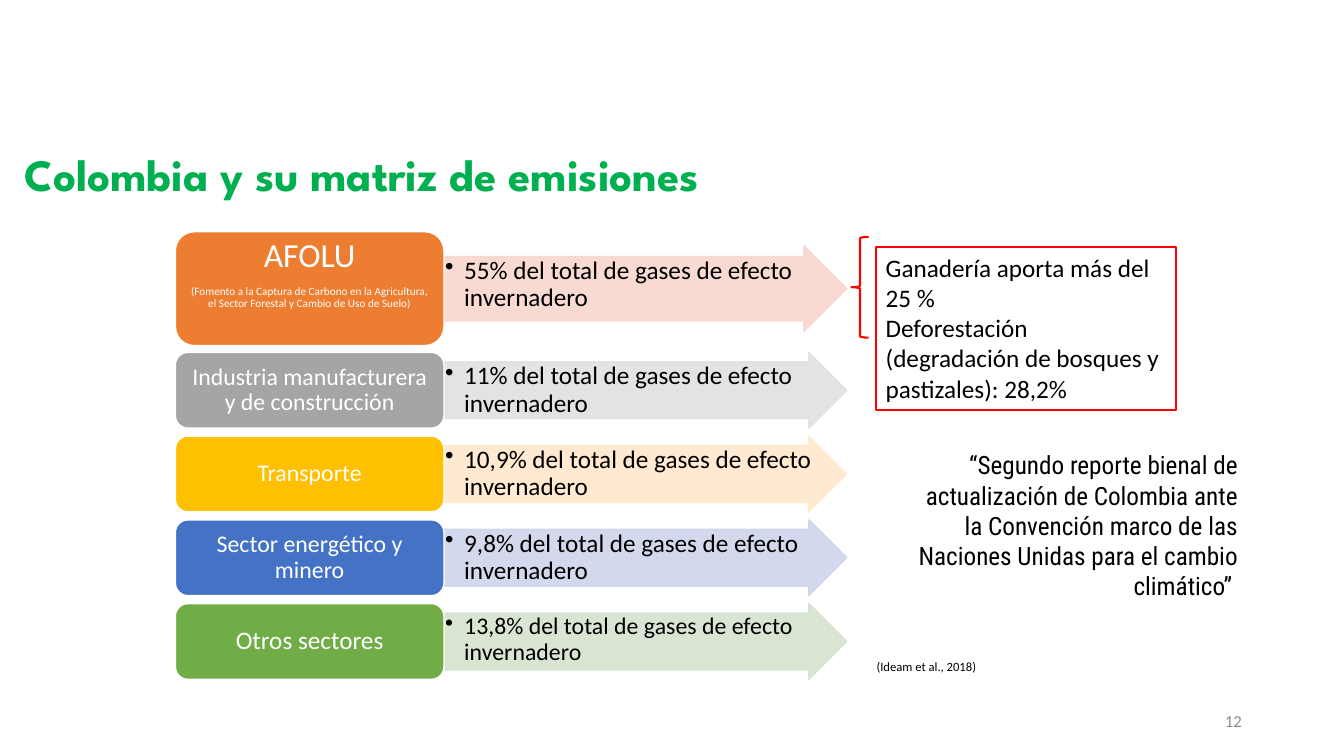
from pptx import Presentation
from pptx.dml.color import RGBColor
from pptx.enum.shapes import MSO_SHAPE
from pptx.enum.text import MSO_ANCHOR, MSO_AUTO_SIZE, PP_ALIGN
from pptx.oxml.ns import qn
from pptx.util import Cm, Pt
from lxml.etree import SubElement

BLACK = RGBColor(0x00, 0x00, 0x00)
WHITE = RGBColor(0xFF, 0xFF, 0xFF)
GRAY = RGBColor(0x8C, 0x8C, 0x8C)
GREEN = RGBColor(0x00, 0xB0, 0x50)
RED = RGBColor(0xFF, 0x00, 0x00)
ORANGE = RGBColor(0xED, 0x7D, 0x31)
SILVER = RGBColor(0xA5, 0xA5, 0xA5)
GOLD = RGBColor(0xFF, 0xC0, 0x00)
BLUE = RGBColor(0x44, 0x72, 0xC4)
LEAF = RGBColor(0x70, 0xAD, 0x47)
PEACH = RGBColor(0xF8, 0xD7, 0xCE)
MIST = RGBColor(0xE1, 0xE1, 0xE1)
CREAM = RGBColor(0xFF, 0xE8, 0xCC)
SKY = RGBColor(0xCF, 0xD5, 0xEA)
MINT = RGBColor(0xD5, 0xE3, 0xCF)

LABEL = "{} del total de gases de efecto invernadero"
SECTORS = [
    ("Industria manufacturera y de construcción", 17, SILVER, "11%", 18, MIST),
    ("Transporte", 17, GOLD, "10,9%", 18, CREAM),
    ("Sector energético y minero", 17, BLUE, "9,8%", 18, SKY),
    ("Otros sectores", 18, LEAF, "13,8%", 17, MINT),
]


def write(frame, text, size=18, font="Calibri", color=BLACK, bold=False,
          align=PP_ALIGN.LEFT, anchor=MSO_ANCHOR.TOP, inset=(0.25, 0.13),
          space=None, after=None, bullet=False, more=False):
    """Write one paragraph into a frame; more=True appends it."""
    if more:
        para = frame.add_paragraph()
    else:
        para = frame.paragraphs[0]
        frame.word_wrap = True
        frame.auto_size = MSO_AUTO_SIZE.NONE
        frame.vertical_anchor = anchor
        frame.margin_left = frame.margin_right = Cm(inset[0])
        frame.margin_top = frame.margin_bottom = Cm(inset[1])
    para.alignment = align
    para.line_spacing = space
    if after:
        para.space_after = Pt(after)
    if bullet:
        props = para._p.get_or_add_pPr()
        props.set("marL", str(Cm(0.48)))
        props.set("indent", str(-Cm(0.48)))
        SubElement(props, qn("a:buChar")).set("char", "•")
    run = para.add_run()
    run.text = text
    run.font.size = Pt(size)
    run.font.name = font
    run.font.bold = bold
    run.font.color.rgb = color


def place(slide, kind, box, line, width, fill=None):
    """Add a flat shape in a box given in centimetres."""
    shape = slide.shapes.add_shape(kind, *map(Cm, box))
    shape.shadow.inherit = False
    if fill is None:
        shape.fill.background()
    else:
        shape.fill.solid()
        shape.fill.fore_color.rgb = fill
    shape.line.color.rgb = line
    shape.line.width = Pt(width)
    return shape


def note(slide, box, text, **style):
    """Add a text box in a box given in centimetres."""
    frame = slide.shapes.add_textbox(*map(Cm, box)).text_frame
    write(frame, text, **style)


def head(slide, box):
    """Fill and move the title."""
    title = slide.shapes.title
    title.left, title.top, title.width, title.height = map(Cm, box)
    write(title.text_frame, "Colombia y su matriz de emisiones", size=32,
          font="League Spartan", color=GREEN, bold=True)


def arrow(slide, box, share, size, tint):
    """Draw a pale arrow with its share of emissions."""
    shape = place(slide, MSO_SHAPE.RIGHT_ARROW, box, tint, 1, tint)
    shape.adjustments[0] = 0.75
    shape.adjustments[1] = 0.5
    for color in shape._element.spPr.iter(qn("a:srgbClr")):
        SubElement(color, qn("a:alpha")).set("val", "90000")
    write(shape.text_frame, LABEL.format(share), size=size,
          inset=(0.03, 0.03), space=0.9, bullet=True)


def sector(slide, box, fill):
    """Draw a rounded sector box and return its text frame."""
    return place(slide, MSO_SHAPE.ROUNDED_RECTANGLE, box, WHITE, 1,
                 fill).text_frame


def matrix(slide, box):
    """Draw the first, taller row and the four equal rows below it."""
    left, top, width, height = box
    wide, tall, high, step = 6.77, 2.87, 1.91, 2.11
    mid, span = left + wide, width - wide
    style = dict(color=WHITE, align=PP_ALIGN.CENTER, space=0.9)

    thick = 2.16
    arrow(slide, (mid, top + (tall - thick) / 2, span, thick), "55%", 18, PEACH)
    frame = sector(slide, (left, top, wide, tall), ORANGE)
    write(frame, "AFOLU", size=24, inset=(0.25, 0.03), after=8, **style)
    write(frame, "(Fomento a la Captura de Carbono en la Agricultura, "
          "el Sector Forestal y Cambio de Uso de Suelo)", size=8, more=True,
          **style)

    first = top + height - 3 * step - high
    for row, (name, size, fill, share, small, tint) in enumerate(SECTORS):
        y = first + row * step
        arrow(slide, (mid, y, span, high), share, small, tint)
        frame = sector(slide, (left, y, wide, high), fill)
        write(frame, name, size=size, anchor=MSO_ANCHOR.MIDDLE,
              inset=(0.17, 0.09), **style)


def detail(slide, box):
    """Draw the red brace and the framed detail beside it."""
    left, top, width, height = box
    place(slide, MSO_SHAPE.LEFT_BRACE, (left, top, 0.43, 2.54), RED, 1.5)
    frame = place(slide, MSO_SHAPE.RECTANGLE,
                  (left + 0.61, top + 0.25, width - 0.61, height - 0.25),
                  RED, 1.5).text_frame
    write(frame, "Ganadería aporta más del 25 %")
    write(frame, "Deforestación (degradación de bosques y pastizales): 28,2%",
          more=True)


def main():
    """Build the slide and save it."""
    deck = Presentation()
    deck.slide_width, deck.slide_height = Cm(33.87), Cm(19.05)
    slide = deck.slides.add_slide(deck.slide_layouts[5])
    head(slide, (0.36, 3.56, 19.86, 1.63))
    matrix(slide, (4.42, 5.84, 16.92, 11.28))
    detail(slide, (21.46, 5.97, 8.18, 4.37))
    note(slide, (22.56, 11.2, 8.89, 4.11),
         "“Segundo reporte bienal de actualización de Colombia ante la "
         "Convención marco de las Naciones Unidas para el cambio climático” ",
         font="Roboto Condensed", align=PP_ALIGN.RIGHT)
    note(slide, (21.84, 16.48, 3.6, 0.64), "(Ideam et al., 2018)", size=9)
    note(slide, (23.93, 17.65, 7.62, 1.02), "12", size=12, color=GRAY,
         align=PP_ALIGN.RIGHT, anchor=MSO_ANCHOR.MIDDLE)
    deck.save("out.pptx")


if __name__ == "__main__":
    main()
